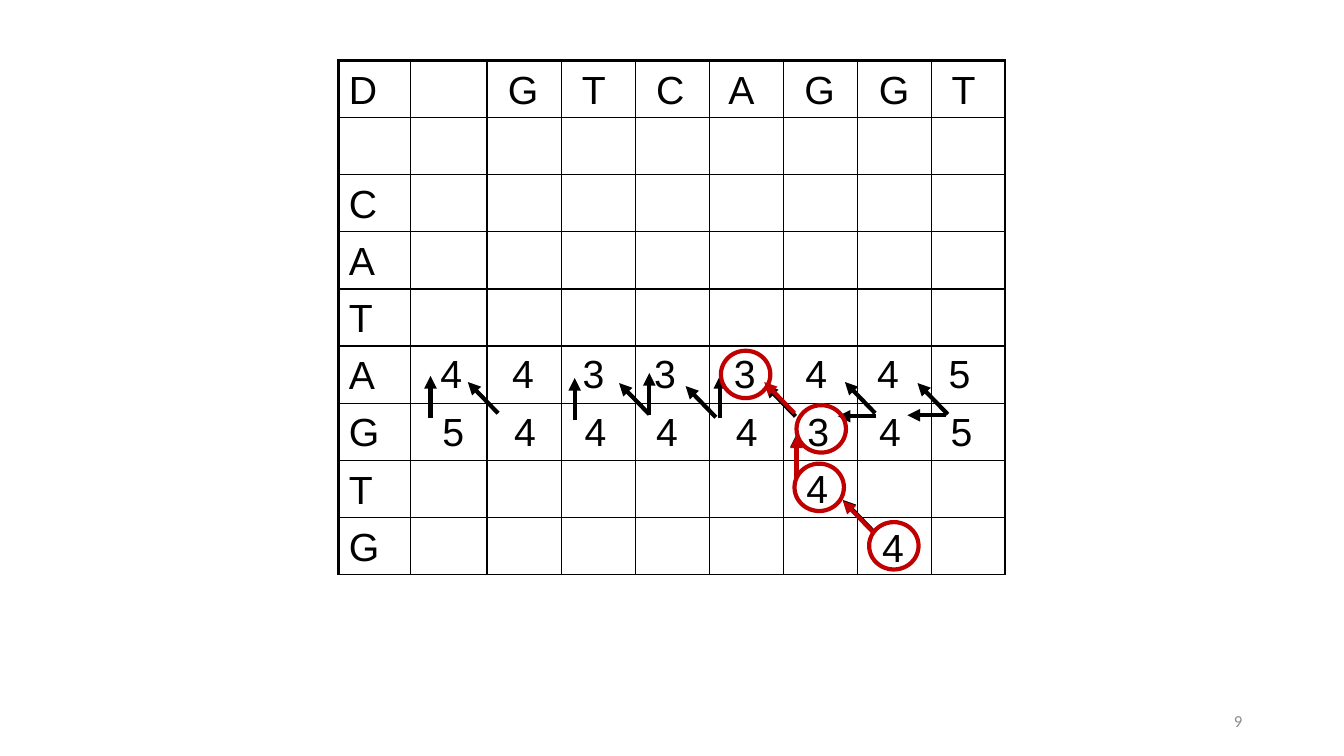
from lxml import etree
from pptx import Presentation
from pptx.dml.color import RGBColor
from pptx.enum import shapes, text
from pptx.oxml import ns
from pptx.util import Inches, Pt

BLACK = RGBColor(0x00, 0x00, 0x00)
RED = RGBColor(0xC0, 0x00, 0x00)
GRAY = RGBColor(0x8C, 0x8C, 0x8C)


def write(frame, content, size=28, name="Arial", color=BLACK):
    paragraph = frame.paragraphs[0]
    run = paragraph.add_run()
    run.text = content
    for attribute, value in {"size": Pt(size), "name": name}.items():
        setattr(run.font, attribute, value)
    run.font.color.rgb = color
    return paragraph


def add_arrow(start, offset, color):
    x, y = start
    dx, dy = offset
    arrow = slide.shapes.add_connector(
        shapes.MSO_CONNECTOR.STRAIGHT, Inches(x), Inches(y), Inches(x + dx), Inches(y + dy)
    )
    arrow.line.color.rgb = color
    arrow.line.width = Pt(3)
    etree.SubElement(arrow.line._get_or_add_ln(), ns.qn("a:tailEnd"), type="triangle")
    etree.SubElement(arrow._element.spPr, ns.qn("a:effectLst"))


presentation = Presentation()
presentation.slide_width = Inches(13.33)
presentation.slide_height = Inches(7.5)
slide = presentation.slides.add_slide(presentation.slide_layouts[6])

column_letters = ["D", "", " G", " T", " C", " A", " G", " G", " T"]
row_letters = ["D", "", "C", "A", "T", "A", "G", "T", "G"]
column_widths = [0.71, 0.76, 0.74, 0.73, 0.74, 0.73, 0.74, 0.73, 0.73]
last = len(column_widths) - 1

matrix = slide.shapes.add_table(
    len(row_letters), len(column_letters), Inches(3.36), Inches(0.6), Inches(6.61), Inches(5.1)
).table
matrix.first_row = False
matrix.horz_banding = False
for column, width in zip(matrix.columns, column_widths):
    column.width = Inches(width)
for row in matrix.rows:
    row.height = Inches(5.1 / len(row_letters))

cell_format = {
    "vertical_anchor": text.MSO_ANCHOR.BOTTOM,
    "margin_left": Inches(0.1),
    "margin_right": Inches(0.1),
    "margin_top": Inches(0.05),
    "margin_bottom": Inches(0.05),
}
for r, row_letter in enumerate(row_letters):
    for c, column_letter in enumerate(column_letters):
        cell = matrix.cell(r, c)
        for attribute, value in cell_format.items():
            setattr(cell, attribute, value)
        letter = column_letter if r == 0 else row_letter if c == 0 else ""
        if letter:
            write(cell.text_frame, letter)
        properties = cell._tc.get_or_add_tcPr()
        outer_sides = {"lnL": c == 0, "lnR": c == last, "lnT": r == 0, "lnB": False}
        for side, is_outer in outer_sides.items():
            border = etree.SubElement(
                properties, ns.qn(f"a:{side}"), w=str(Pt(2.25 if is_outer else 1))
            )
            fill = etree.SubElement(border, ns.qn("a:solidFill"))
            etree.SubElement(fill, ns.qn("a:srgbClr"), val=str(BLACK))
        cell.fill.background()

score_lefts = [4.27, 4.98, 5.68, 6.39, 7.18, 7.89, 8.6, 9.31]
score_widths = [0.39, 0.39, 0.42, 0.42, 0.49, 0.49, 0.49, 0.49]
scores = []
for digits, shift, top in [("44333445", 0, 3.42), ("54444345", 0.02, 3.99)]:
    for digit, left, width in zip(digits, score_lefts, score_widths):
        scores.append((digit, left + shift, top, width))
scores += [("4", 7.9, 4.56, 0.49), ("4", 8.65, 5.14, 0.49)]
for digit, left, top, width in scores:
    score = slide.shapes.add_textbox(Inches(left), Inches(top), Inches(width), Inches(0.57))
    score.text_frame.word_wrap = True
    write(score.text_frame, digit)

UP = (0, -0.42)
DIAGONAL = (-0.3, -0.31)
LEFT = (-0.38, 0)
candidate_steps = {
    UP: [(4.27, 4.15), (5.7, 4.17), (6.44, 4.12), (7.14, 4.15), (7.9, 4.73)],
    DIAGONAL: [(4.94, 4.1), (6.44, 4.11), (7.1, 4.14), (7.89, 4.13),
               (8.68, 4.1), (9.4, 4.11), (8.66, 5.27)],
    LEFT: [(8.69, 4.13), (9.38, 4.12)],
}
for offset, starts in candidate_steps.items():
    for start in starts:
        add_arrow(start, offset, BLACK)

for left, top in [(8.62, 5.18), (7.88, 4.6), (7.9, 4.02), (7.15, 3.48)]:
    circle = slide.shapes.add_shape(
        shapes.MSO_SHAPE.OVAL, Inches(left), Inches(top), Inches(0.49), Inches(0.47)
    )
    circle.shadow.inherit = False
    circle.fill.background()
    circle.line.color.rgb = RED
    circle.line.width = Pt(3)

for start, offset in [((8.66, 5.28), DIAGONAL), ((7.9, 4.74), UP), ((7.88, 4.1), DIAGONAL)]:
    add_arrow(start, offset, RED)

page_number = slide.shapes.add_textbox(Inches(9.42), Inches(6.95), Inches(3), Inches(0.4))
page_number.text_frame.word_wrap = True
page_number.text_frame.vertical_anchor = text.MSO_ANCHOR.MIDDLE
write(page_number.text_frame, "9", 12, "Calibri", GRAY).alignment = text.PP_ALIGN.RIGHT

presentation.save("out.pptx")
